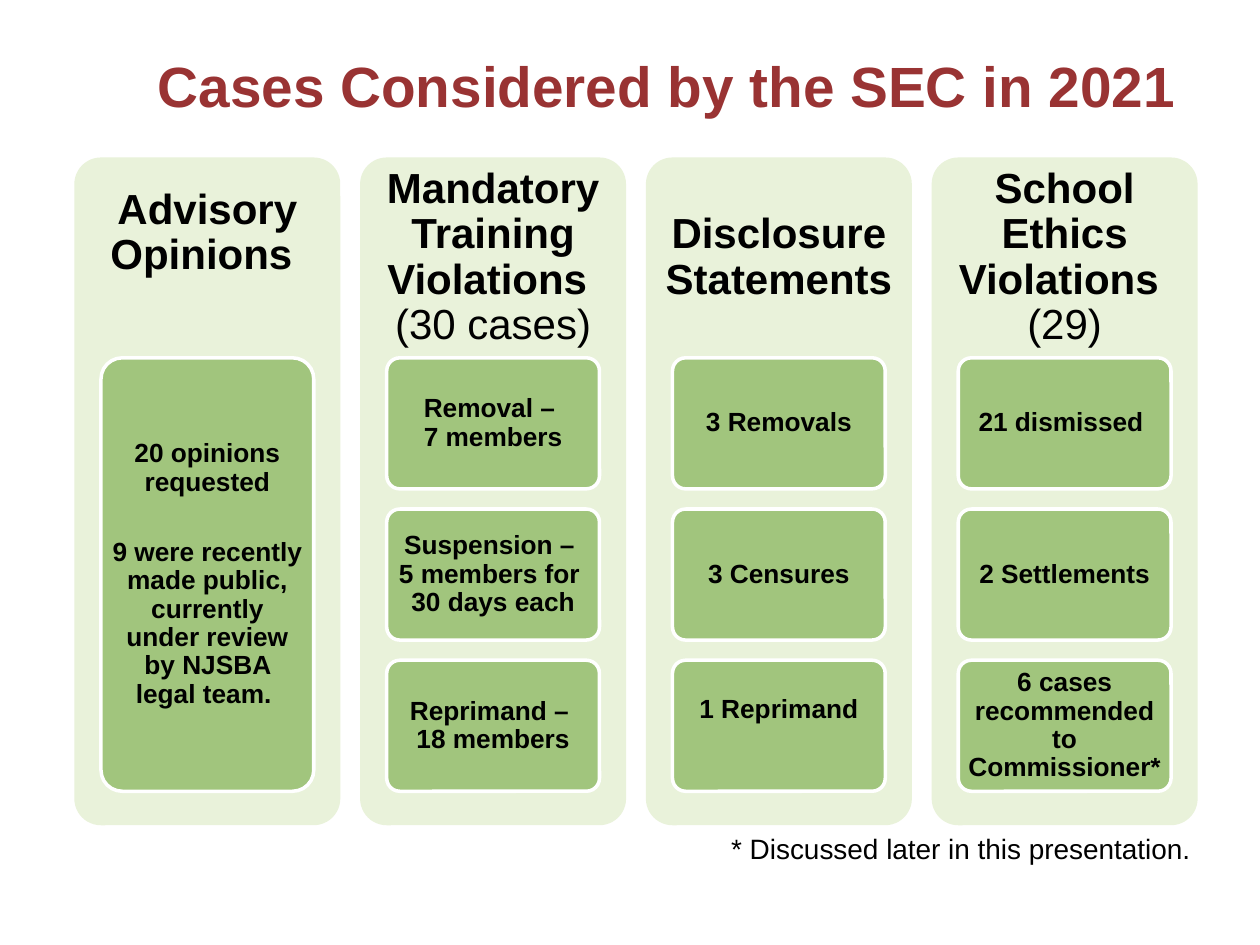
from dataclasses import dataclass

from pptx import Presentation
from pptx.dml.color import RGBColor
from pptx.enum.shapes import MSO_SHAPE
from pptx.enum.text import MSO_ANCHOR, PP_ALIGN
from pptx.util import Pt

BLACK = RGBColor(0x00, 0x00, 0x00)
WHITE = RGBColor(0xFF, 0xFF, 0xFF)
MAROON = RGBColor(0x99, 0x33, 0x33)
PALE_GREEN = RGBColor(0xE9, 0xF2, 0xDA)
GREEN = RGBColor(0xA1, 0xC5, 0x7D)

PANEL_LEFT, PANEL_TOP = 42.5, 90
PANEL_WIDTH, PANEL_HEIGHT, PANEL_PITCH = 152, 381.6, 163.3
HEADING_HEIGHT = 114.5
CARD_INDENT, CARD_TOP, CARD_WIDTH = 15.2, 204.5, 121.6
CARDS_HEIGHT, CARD_GAP = 247.7, 11.5


@dataclass(frozen=True)
class Card:
    paragraphs: tuple[str, ...]
    lift: float = 0


@dataclass(frozen=True)
class Category:
    heading: str
    cards: tuple[Card, ...]
    count: str = ""
    lift: float = 0


CATEGORIES = (
    Category(
        "Advisory Opinions ",
        (Card((
            "20 opinions requested",
            "9 were recently made public, currently under review by NJSBA legal team. ",
        )),),
        lift=28,
    ),
    Category(
        "Mandatory Training Violations ",
        (
            Card(("Removal – \v7 members",)),
            Card(("Suspension – \v5 members for \v30 days each",)),
            Card(("Reprimand – \v18 members",)),
        ),
        count="(30 cases)",
    ),
    Category(
        "Disclosure Statements",
        (
            Card(("3 Removals",)),
            Card(("3 Censures",)),
            Card(("1 Reprimand",), lift=18),
        ),
    ),
    Category(
        "School Ethics Violations ",
        (
            Card(("21 dismissed ",)),
            Card(("2 Settlements",)),
            Card(("6 cases recommended to Commissioner*",)),
        ),
        count="(29)",
    ),
)


def set_font(paragraph, size: float, color: RGBColor = BLACK, bold: bool = False) -> None:
    font = paragraph.font
    font.name = "Arial"
    font.size = Pt(size)
    font.bold = bold
    font.color.rgb = color


def set_frame(frame, side: float, top: float, lift: float) -> None:
    frame.word_wrap = True
    frame.vertical_anchor = MSO_ANCHOR.MIDDLE
    frame.margin_left = frame.margin_right = Pt(side)
    frame.margin_top = Pt(top)
    frame.margin_bottom = Pt(top + lift)


def add_panel(slide, left: float, top: float, width: float, height: float, fill: RGBColor):
    panel = slide.shapes.add_shape(
        MSO_SHAPE.ROUNDED_RECTANGLE, Pt(left), Pt(top), Pt(width), Pt(height)
    )
    panel.adjustments[0] = 0.1
    panel.shadow.inherit = False
    panel.fill.solid()
    panel.fill.fore_color.rgb = fill
    panel.line.fill.background()
    return panel


def add_heading(slide, category: Category, left: float) -> None:
    heading = slide.shapes.add_textbox(
        Pt(left), Pt(PANEL_TOP), Pt(PANEL_WIDTH), Pt(HEADING_HEIGHT)
    )
    set_frame(heading.text_frame, 7.2, 7.2, category.lift)
    paragraph = heading.text_frame.paragraphs[0]
    paragraph.alignment = PP_ALIGN.CENTER
    paragraph.line_spacing = 0.9
    set_font(paragraph, 24, bold=True)
    paragraph.add_run().text = category.heading
    if category.count:
        paragraph.add_line_break()
        count = paragraph.add_run()
        count.text = category.count
        count.font.bold = False


def add_card(slide, card: Card, left: float, top: float, height: float) -> None:
    box = add_panel(slide, left, top, CARD_WIDTH, height, GREEN)
    box.line.color.rgb = WHITE
    box.line.width = Pt(2)
    frame = box.text_frame
    set_frame(frame, 3, 2.2, card.lift)
    for index, wording in enumerate(card.paragraphs):
        paragraph = frame.add_paragraph() if index else frame.paragraphs[0]
        paragraph.text = wording
        paragraph.alignment = PP_ALIGN.CENTER
        paragraph.line_spacing = 0.9
        if index:
            paragraph.space_before = Pt(23.8)
        set_font(paragraph, 15, bold=True)


def add_category(slide, category: Category, left: float) -> None:
    add_panel(slide, left, PANEL_TOP, PANEL_WIDTH, PANEL_HEIGHT, PALE_GREEN)
    add_heading(slide, category, left)
    pitch = (CARDS_HEIGHT + CARD_GAP) / len(category.cards)
    for row, card in enumerate(category.cards):
        add_card(slide, card, left + CARD_INDENT, CARD_TOP + row * pitch, pitch - CARD_GAP)


def add_title(slide) -> None:
    title = slide.shapes.title
    title.left, title.top, title.width, title.height = Pt(77.8), Pt(12.2), Pt(606.2), Pt(72)
    title.text_frame.text = "Cases Considered by the SEC in 2021"
    title.text_frame.vertical_anchor = MSO_ANCHOR.MIDDLE
    paragraph = title.text_frame.paragraphs[0]
    paragraph.alignment = PP_ALIGN.CENTER
    set_font(paragraph, 32.4, MAROON, bold=True)


def add_footnote(slide) -> None:
    footnote = slide.shapes.add_textbox(Pt(380.9), Pt(471.6), Pt(311), Pt(26.6))
    footnote.text_frame.word_wrap = True
    paragraph = footnote.text_frame.paragraphs[0]
    paragraph.text = "* Discussed later in this presentation. "
    paragraph.alignment = PP_ALIGN.RIGHT
    set_font(paragraph, 16)


def main() -> None:
    presentation = Presentation()
    presentation.slide_width, presentation.slide_height = Pt(720), Pt(540)
    slide = presentation.slides.add_slide(presentation.slide_layouts[5])
    add_title(slide)
    for column, category in enumerate(CATEGORIES):
        add_category(slide, category, PANEL_LEFT + column * PANEL_PITCH)
    add_footnote(slide)
    presentation.save("out.pptx")


if __name__ == "__main__":
    main()
